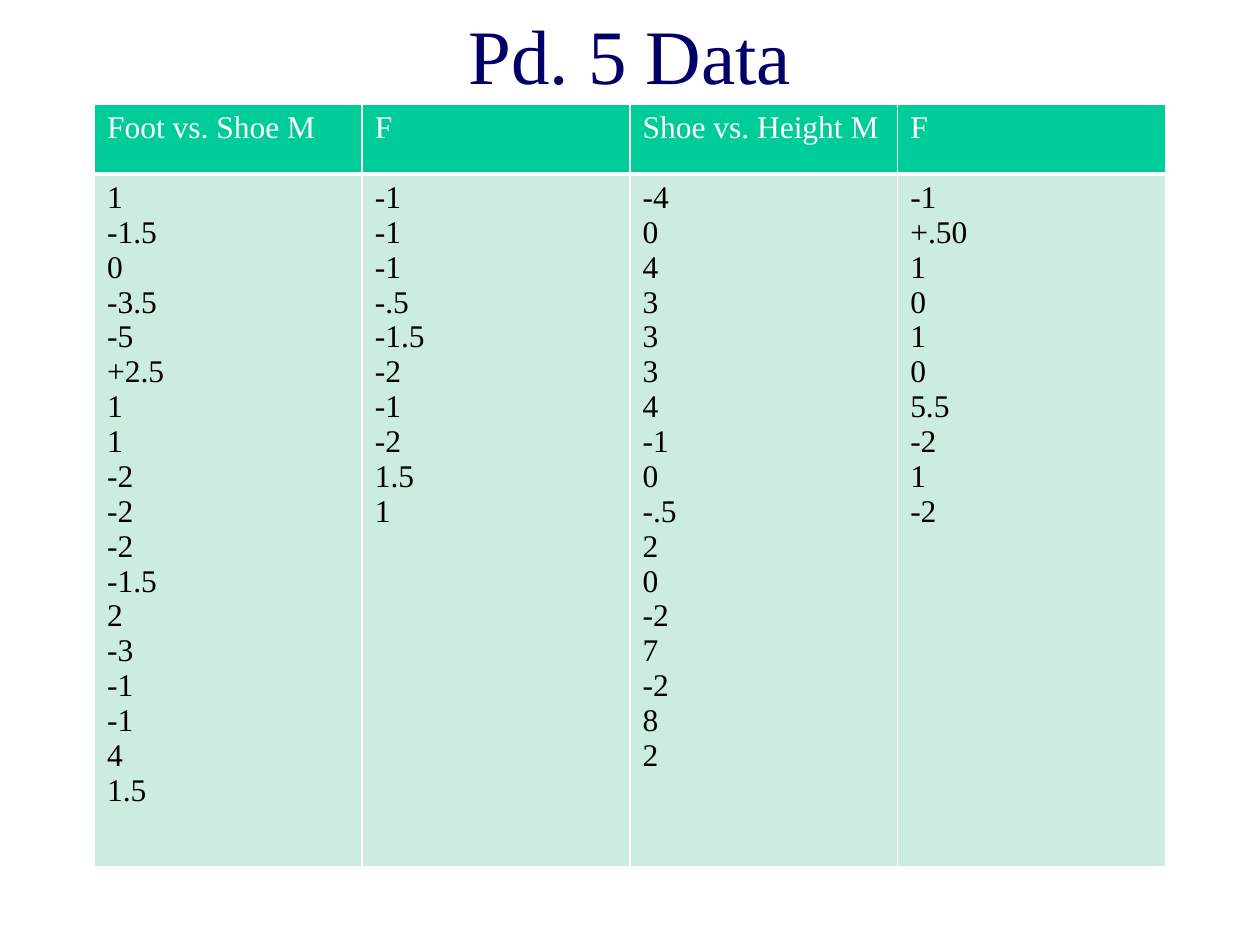
from pptx import Presentation
from pptx.dml.color import RGBColor
from pptx.enum.text import MSO_ANCHOR as Anchor, PP_ALIGN as Align
from pptx.oxml.ns import qn
from pptx.util import Pt
from lxml.etree import SubElement as Sub

FACE = "Times New Roman"
HEADS = ["Foot vs. Shoe M", "F", "Shoe vs. Height M", "F"]
DATA = [
    "1 -1.5 0 -3.5 -5 +2.5 1 1 -2 -2 -2 -1.5 2 -3 -1 -1 4 1.5",
    "-1 -1 -1 -.5 -1.5 -2 -1 -2 1.5 1",
    "-4 0 4 3 3 3 4 -1 0 -.5 2 0 -2 7 -2 8 2",
    "-1 +.50 1 0 1 0 5.5 -2 1 -2",
]


def paint(code):
    """Turn a hex string into a colour."""
    return RGBColor.from_string(code)


def write(frame, lines, size, ink, align=Align.LEFT):
    """Put one paragraph per line into a text frame."""
    look = {"name": FACE, "size": Pt(size), "bold": False}
    for i, line in enumerate(lines):
        para = frame.paragraphs[0] if i == 0 else frame.add_paragraph()
        para.alignment = align
        run = para.add_run()
        run.text = line
        for key, val in look.items():
            setattr(run.font, key, val)
        run.font.color.rgb = paint(ink)


def edge(cell, base):
    """Draw white borders round a cell, with the given bottom width."""
    prop = cell._tc.get_or_add_tcPr()
    for side, wide in {"L": 1, "R": 1, "T": 1, "B": base}.items():
        line = Sub(prop, qn(f"a:ln{side}"), w=str(int(Pt(wide))))
        Sub(Sub(line, qn("a:solidFill")), qn("a:srgbClr"), val="FFFFFF")


def title(slide, x, y, w, h):
    """Place the slide title, centred in its box."""
    frame = slide.shapes.add_textbox(Pt(x), Pt(y), Pt(w), Pt(h)).text_frame
    for key, val in {"word_wrap": True, "vertical_anchor": Anchor.MIDDLE}.items():
        setattr(frame, key, val)
    write(frame, ["Pd. 5 Data"], 44, "000066", Align.CENTER)


def table(slide, x, y, w, h, top):
    """Place the data table, with a header row of height top."""
    grid = slide.shapes.add_table(
        2, len(HEADS), Pt(x), Pt(y), Pt(w), Pt(h)).table
    for col in grid.columns:
        col.width = Pt(w / len(HEADS))
    rows = [
        (top, [[head] for head in HEADS], "FFFFFF", "00CC99", 3),
        (h - top, [vals.split() for vals in DATA], "000000", "CCECDE", 1),
    ]
    for r, (tall, cells, ink, back, base) in enumerate(rows):
        grid.rows[r].height = Pt(tall)
        for c, lines in enumerate(cells):
            cell = grid.cell(r, c)
            edge(cell, base)
            cell.fill.solid()
            cell.fill.fore_color.rgb = paint(back)
            write(cell.text_frame, lines, 18, ink)


def main():
    """Build the slide and save it."""
    deck = Presentation()
    deck.slide_width, deck.slide_height = Pt(720), Pt(540)
    slide = deck.slides.add_slide(deck.slide_layouts[6])
    title(slide, 54, -14.4, 612, 90)
    table(slide, 54, 59.4, 612, 425, 40)
    deck.save("out.pptx")


if __name__ == "__main__":
    main()
